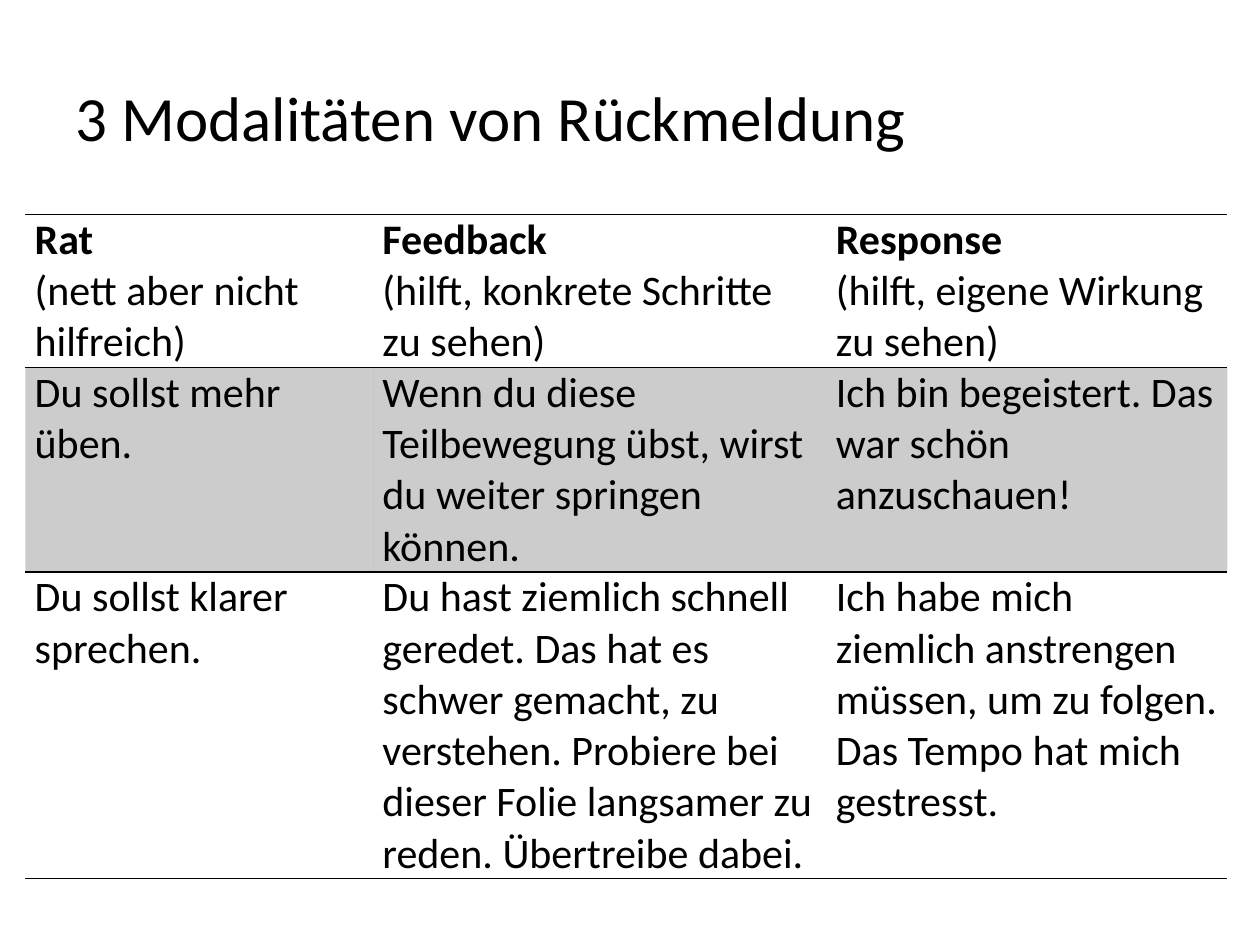
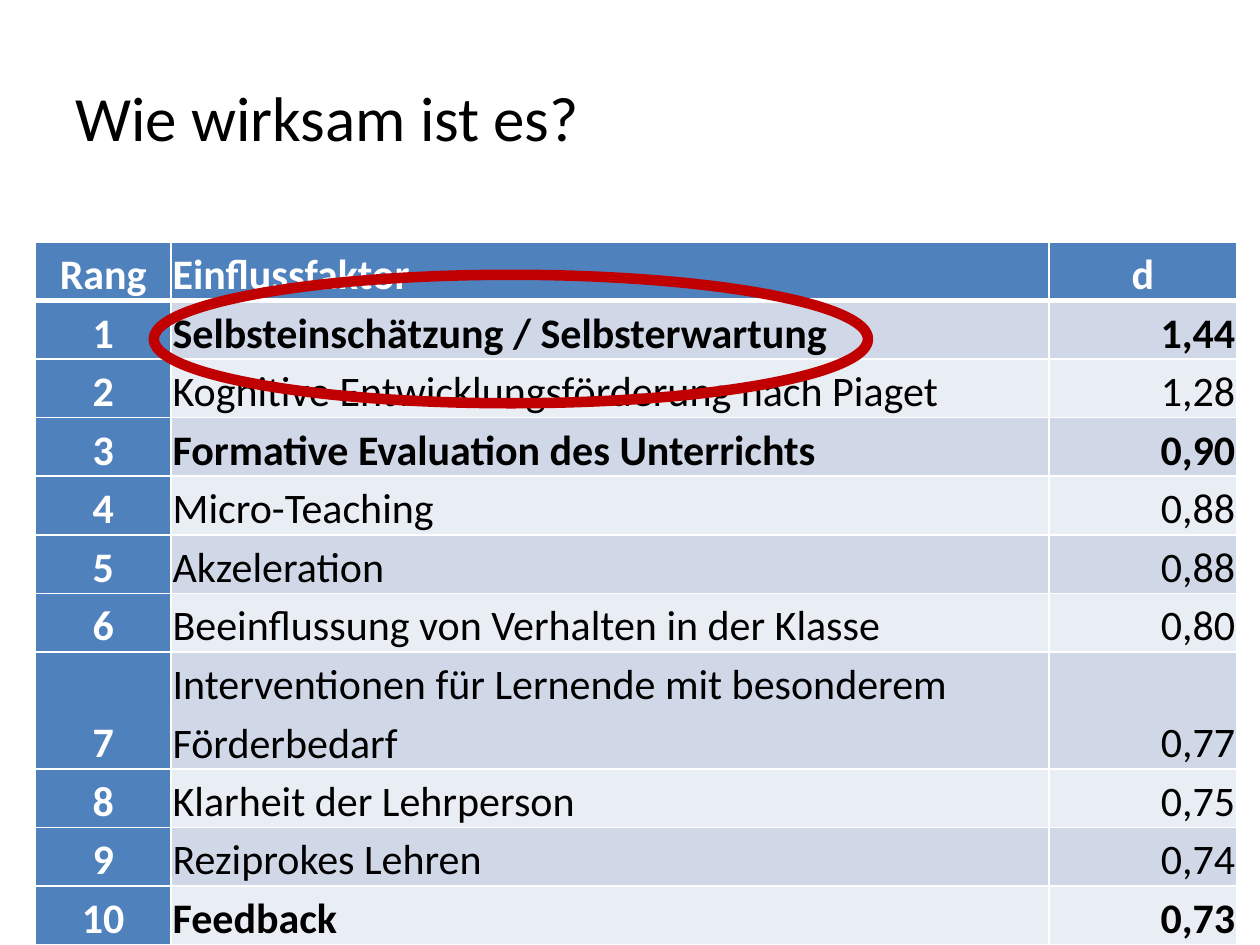
"""Build two slides on kinds of feedback and how effective they are."""
import lxml.etree
import pptx
import pptx.dml.color
import pptx.enum.shapes
import pptx.enum.text
import pptx.oxml.ns
import pptx.util

Cm = pptx.util.Cm
Pt = pptx.util.Pt
RGBColor = pptx.dml.color.RGBColor
Align = pptx.enum.text.PP_ALIGN
Anchor = pptx.enum.text.MSO_ANCHOR
qn = pptx.oxml.ns.qn

BLACK = RGBColor(0x00, 0x00, 0x00)
WHITE = RGBColor(0xFF, 0xFF, 0xFF)
BLUE = RGBColor(0x4F, 0x81, 0xBD)
BANDS = (RGBColor(0xE9, 0xED, 0xF4), RGBColor(0xD0, 0xD8, 0xE8))
RED = RGBColor(0xC0, 0x00, 0x00)
FONT = "Calibri"
PLAIN_TABLE_STYLE = "{2D5ABB26-0587-4C30-8999-92F81FD0307C}"

MODES_TITLE = "3 Modalitäten von Rückmeldung"
MODES = [
    ("Rat", "(nett aber nicht hilfreich)"),
    ("Feedback", "(hilft, konkrete Schritte zu sehen)"),
    ("Response", "(hilft, eigene Wirkung zu sehen)"),
]
EXAMPLES = [
    (
        "Du sollst mehr üben.",
        "Wenn du diese Teilbewegung übst, wirst du weiter springen können.",
        "Ich bin begeistert. Das war schön anzuschauen!",
    ),
    (
        "Du sollst klarer sprechen.",
        "Du hast ziemlich schnell geredet. Das hat es schwer gemacht, zu verstehen. "
        "Probiere bei dieser Folie langsamer zu reden. Übertreibe dabei.",
        "Ich habe mich ziemlich anstrengen müssen, um zu folgen. "
        "Das Tempo hat mich gestresst.",
    ),
]
MODE_LINES = (3, 4, 6)
MODE_COLUMNS = (7.01, 9.14, 8.08)

EFFECT_TITLE = "Wie wirksam ist es?"
EFFECT_HEADER = ("Rang", "Einflussfaktor", "d")
EFFECTS = [
    ("Selbsteinschätzung / Selbsterwartung", "1,44"),
    ("Kognitive Entwicklungsförderung nach Piaget", "1,28"),
    ("Formative Evaluation des Unterrichts", "0,90"),
    ("Micro-Teaching", "0,88"),
    ("Akzeleration", "0,88"),
    ("Beeinflussung von Verhalten in der Klasse", "0,80"),
    ("Interventionen für Lernende mit besonderem Förderbedarf", "0,77"),
    ("Klarheit der Lehrperson", "0,75"),
    ("Reziprokes Lehren", "0,74"),
    ("Feedback", "0,73"),
]
HIGHLIGHTED_RANKS = (1, 3, 10)
TWO_LINE_RANK = 7
EFFECT_COLUMNS = (2.74, 17.7, 3.78)


def apply_format(target, values):
    for name, value in values.items():
        setattr(target, name, value)


def add_run(paragraph, text, size=24, color=BLACK, bold=False):
    run = paragraph.add_run()
    run.text = text
    apply_format(run.font, {"name": FONT, "size": Pt(size), "bold": bold})
    run.font.color.rgb = color


def add_titled_slide(presentation, title):
    slide = presentation.slides.add_slide(presentation.slide_layouts[6])
    box = slide.shapes.add_textbox(Cm(1.27), Cm(0.76), Cm(18.24), Cm(3.18))
    apply_format(box.text_frame, {"word_wrap": True, "vertical_anchor": Anchor.MIDDLE})
    add_run(box.text_frame.paragraphs[0], title, size=36)
    return slide


def add_plain_table(slide, left, top, widths, heights):
    table = slide.shapes.add_table(
        len(heights), len(widths), Cm(left), Cm(top), Cm(sum(widths)), Cm(sum(heights))
    ).table
    apply_format(table, {"first_row": False, "horz_banding": False})
    table._tbl.tblPr.find(qn("a:tableStyleId")).text = PLAIN_TABLE_STYLE
    for column, width in zip(table.columns, widths):
        column.width = Cm(width)
    for row, height in zip(table.rows, heights):
        row.height = Cm(height)
    return table


def format_cell(cell, margin, anchor, fill=None, opacity=None, borders=None):
    apply_format(cell, {
        "margin_left": Cm(margin), "margin_right": Cm(margin),
        "margin_top": 0, "margin_bottom": 0, "vertical_anchor": anchor,
    })
    if fill is None:
        cell.fill.background()
    else:
        cell.fill.solid()
        cell.fill.fore_color.rgb = fill
    properties = cell._tc.get_or_add_tcPr()
    if opacity:
        color = properties.find(".//" + qn("a:srgbClr"))
        lxml.etree.SubElement(color, qn("a:alpha"), val=str(opacity * 1000))
    present = [side for side in "LRTB" if side in (borders or {})]
    for position, side in enumerate(present):
        color, width = borders[side]
        line = lxml.etree.SubElement(properties, qn("a:ln" + side), w=str(Pt(width)))
        solid = lxml.etree.SubElement(line, qn("a:solidFill"))
        lxml.etree.SubElement(solid, qn("a:srgbClr"), val=str(color))
        properties.insert(position, line)


def add_modes_slide(presentation):
    slide = add_titled_slide(presentation, MODES_TITLE)
    heights = [lines * 1.03 for lines in MODE_LINES]
    table = add_plain_table(slide, 0.51, 4.32, MODE_COLUMNS, heights)
    rule = (BLACK, 1)
    row_formats = [
        {"borders": {"T": rule, "B": rule}},
        {"fill": BLACK, "opacity": 20, "borders": {"T": rule}},
        {"fill": WHITE, "borders": {"B": rule}},
    ]
    for row, row_format in zip(table.rows, row_formats):
        for cell in row.cells:
            format_cell(cell, 0.19, Anchor.TOP, **row_format)
    for column, (mode, remark) in enumerate(MODES):
        paragraph = table.cell(0, column).text_frame.paragraphs[0]
        add_run(paragraph, mode, bold=True)
        paragraph.add_line_break()
        add_run(paragraph, remark)
    for row, examples in enumerate(EXAMPLES, 1):
        for column, example in enumerate(examples):
            add_run(table.cell(row, column).text_frame.paragraphs[0], example)


def add_effects_slide(presentation):
    slide = add_titled_slide(presentation, EFFECT_TITLE)
    rows = [EFFECT_HEADER]
    rows += [(str(rank), *effect) for rank, effect in enumerate(EFFECTS, 1)]
    heights = [2.36 if rank == TWO_LINE_RANK else 1.18 for rank in range(len(rows))]
    table = add_plain_table(slide, 0.71, 4.88, EFFECT_COLUMNS, heights)
    for rank, texts in enumerate(rows):
        borders = {side: (WHITE, 1) for side in "LRTB"}
        if rank == 0:
            borders["B"] = (WHITE, 3)
        elif rank == 1:
            borders["T"] = (WHITE, 3)
        for column, text in enumerate(texts):
            cell = table.cell(rank, column)
            heading = rank == 0 or column == 0
            fill = BLUE if heading else BANDS[rank % 2]
            format_cell(cell, 0.03, Anchor.BOTTOM, fill, borders=borders)
            paragraph = cell.text_frame.paragraphs[0]
            last_align = Align.CENTER if rank == 0 else Align.RIGHT
            apply_format(paragraph, {
                "alignment": (Align.CENTER, Align.LEFT, last_align)[column],
                "line_spacing": 1.15,
            })
            add_run(paragraph, text, color=WHITE if heading else BLACK,
                    bold=heading or rank in HIGHLIGHTED_RANKS)
    ring = slide.shapes.add_shape(
        pptx.enum.shapes.MSO_SHAPE.OVAL, Cm(3.1), Cm(5.54), Cm(14.4), Cm(2.59)
    )
    ring.shadow.inherit = False
    ring.fill.background()
    ring.line.color.rgb = RED
    ring.line.width = Pt(6)


def main():
    presentation = pptx.Presentation()
    apply_format(presentation, {"slide_width": Cm(25.4), "slide_height": Cm(19.05)})
    add_modes_slide(presentation)
    add_effects_slide(presentation)
    presentation.save("out.pptx")


if __name__ == "__main__":
    main()
